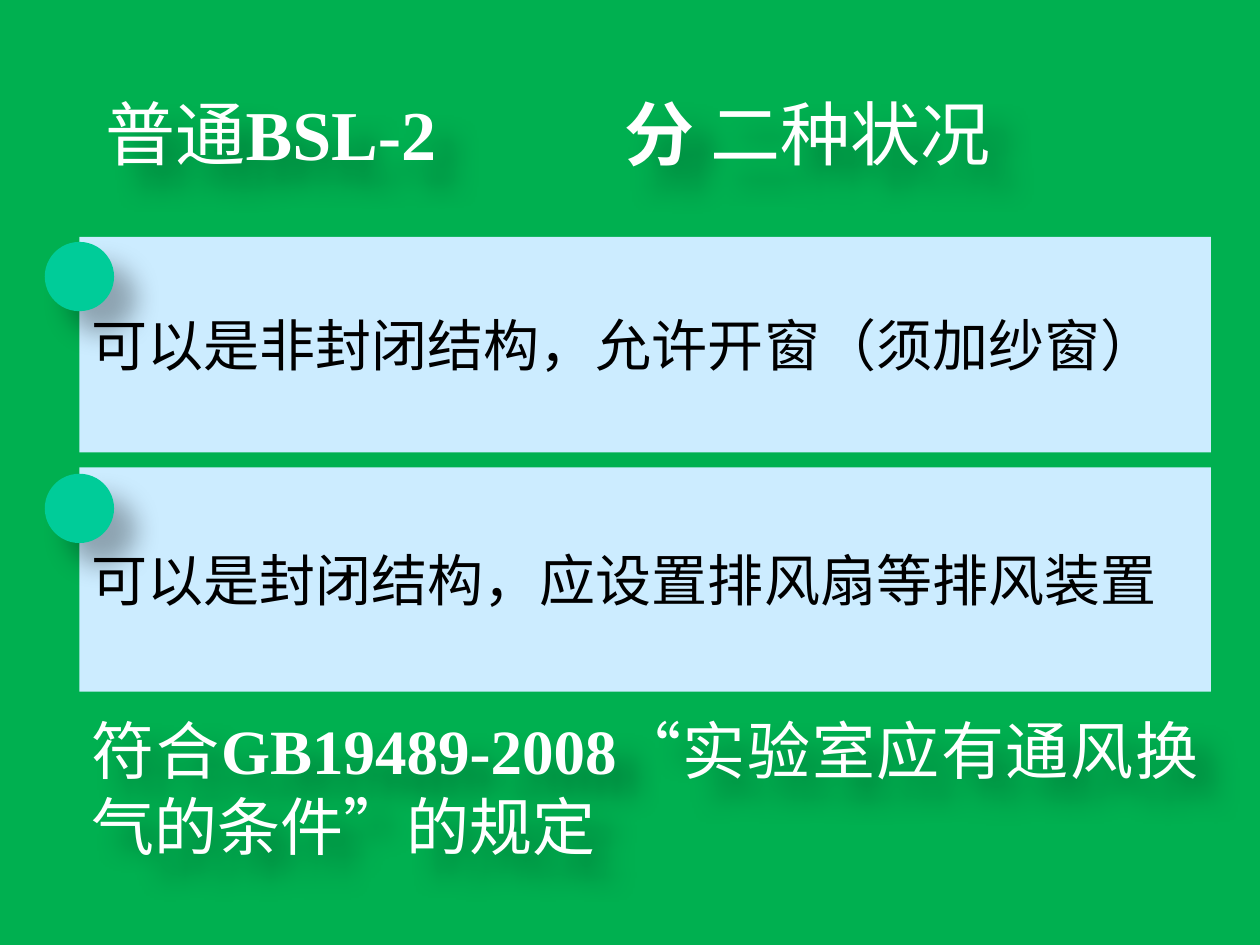
from pptx import Presentation
from pptx.dml.color import RGBColor
from pptx.enum.lang import MSO_LANGUAGE_ID
from pptx.enum.shapes import MSO_SHAPE
from pptx.enum.text import MSO_ANCHOR, MSO_AUTO_SIZE, PP_ALIGN
from pptx.oxml import parse_xml
from pptx.oxml.ns import nsdecls
from pptx.util import Inches, Pt

GREEN = RGBColor(0x00, 0xB0, 0x50)
PALE_BLUE = RGBColor(0xCC, 0xEC, 0xFF)
TEAL = RGBColor(0x00, 0xCC, 0x99)
WHITE = RGBColor(0xFF, 0xFF, 0xFF)
BLACK = RGBColor(0x00, 0x00, 0x00)
SERIF, SANS, CHINESE = "Times New Roman", "Calibri", "Noto Sans CJK SC"
LEFT, WIDTH = 0.63, 8.98
DOT = 0.55


class SlideBuilder:
    def __init__(self, slide):
        self.slide = slide
        slide.background.fill.solid()
        slide.background.fill.fore_color.rgb = GREEN

    def cast_shadow(self, shape):
        shape._element.spPr.append(parse_xml(
            f'<a:effectLst {nsdecls("a")}>'
            f'<a:outerShdw blurRad="{Pt(15)}" dist="{Pt(18)}" dir="2700000" algn="tl" rotWithShape="0">'
            '<a:srgbClr val="000000"><a:alpha val="30000"/></a:srgbClr>'
            '</a:outerShdw></a:effectLst>'))

    def add_runs(self, shape, runs, size, color, align=PP_ALIGN.LEFT, anchor=MSO_ANCHOR.MIDDLE):
        """Fill the first paragraph with (text, font, bold) runs."""
        frame = shape.text_frame
        frame.word_wrap = True
        frame.vertical_anchor = anchor
        paragraph = frame.paragraphs[0]
        paragraph.alignment = align
        paragraph.space_before = Pt(0)
        for text, font_name, bold in runs:
            run = paragraph.add_run()
            run.text = text
            font = run.font
            font.size, font.bold, font.name = Pt(size), bold, font_name
            font.color.rgb = color
            font.language_id = MSO_LANGUAGE_ID.SIMPLIFIED_CHINESE
            run._r.rPr.find("{*}latin").addnext(
                parse_xml(f'<a:ea {nsdecls("a")} typeface="{CHINESE}"/>'))
        return paragraph

    def title(self, top, height, runs, tab):
        title = self.slide.shapes.title
        title.left, title.top = Inches(LEFT), Inches(top)
        title.width, title.height = Inches(WIDTH), Inches(height)
        title.text_frame.auto_size = MSO_AUTO_SIZE.NONE
        title.text_frame.margin_left = Inches(0.21)
        paragraph = self.add_runs(title, runs, 40, WHITE)
        paragraph._p.get_or_add_pPr().append(parse_xml(
            f'<a:tabLst {nsdecls("a")}><a:tab pos="{Inches(tab)}" algn="l"/></a:tabLst>'))
        self.cast_shadow(title)

    def shape(self, kind, left, top, width, height, color):
        shape = self.slide.shapes.add_shape(
            kind, Inches(left), Inches(top), Inches(width), Inches(height))
        shape.fill.solid()
        shape.fill.fore_color.rgb = color
        shape.line.fill.background()
        return shape

    def panel(self, top, height, text):
        panel = self.shape(MSO_SHAPE.RECTANGLE, LEFT, top, WIDTH, height, PALE_BLUE)
        panel.shadow.inherit = False
        self.add_runs(panel, [(text, SERIF, False)], 32, BLACK)

    def dot(self, top):
        self.cast_shadow(self.shape(MSO_SHAPE.OVAL, LEFT - DOT / 2, top, DOT, DOT, TEAL))

    def note(self, top, height, runs):
        note = self.slide.shapes.add_textbox(
            Inches(LEFT), Inches(top), Inches(WIDTH), Inches(height))
        self.add_runs(note, runs, 36, WHITE, PP_ALIGN.JUSTIFY, MSO_ANCHOR.TOP)
        note.text_frame.auto_size = MSO_AUTO_SIZE.SHAPE_TO_FIT_TEXT
        self.cast_shadow(note)


def main():
    presentation = Presentation()
    presentation.slide_width, presentation.slide_height = Inches(10), Inches(7.5)
    builder = SlideBuilder(presentation.slides.add_slide(presentation.slide_layouts[5]))

    builder.title(0.33, 1.45, [
        ("普通", CHINESE, False),
        ("BSL-2\t分 ", SERIF, True),
        ("二种状况", CHINESE, False),
    ], tab=4.12)

    conditions = [
        (1.88, 1.71, 1.92, "可以是非封闭结构，允许开窗（须加纱窗）"),
        (3.71, 1.78, 3.76, "可以是封闭结构，应设置排风扇等排风装置"),
    ]
    for top, height, dot_top, text in conditions:
        builder.panel(top, height, text)
        builder.dot(dot_top)

    builder.note(5.6, 1.31, [
        ("符合", SANS, False),
        ("GB19489-2008", SERIF, True),
        ("“实验室应有通风换气的条件”的规定", SANS, False),
    ])
    presentation.save("out.pptx")


if __name__ == "__main__":
    main()
